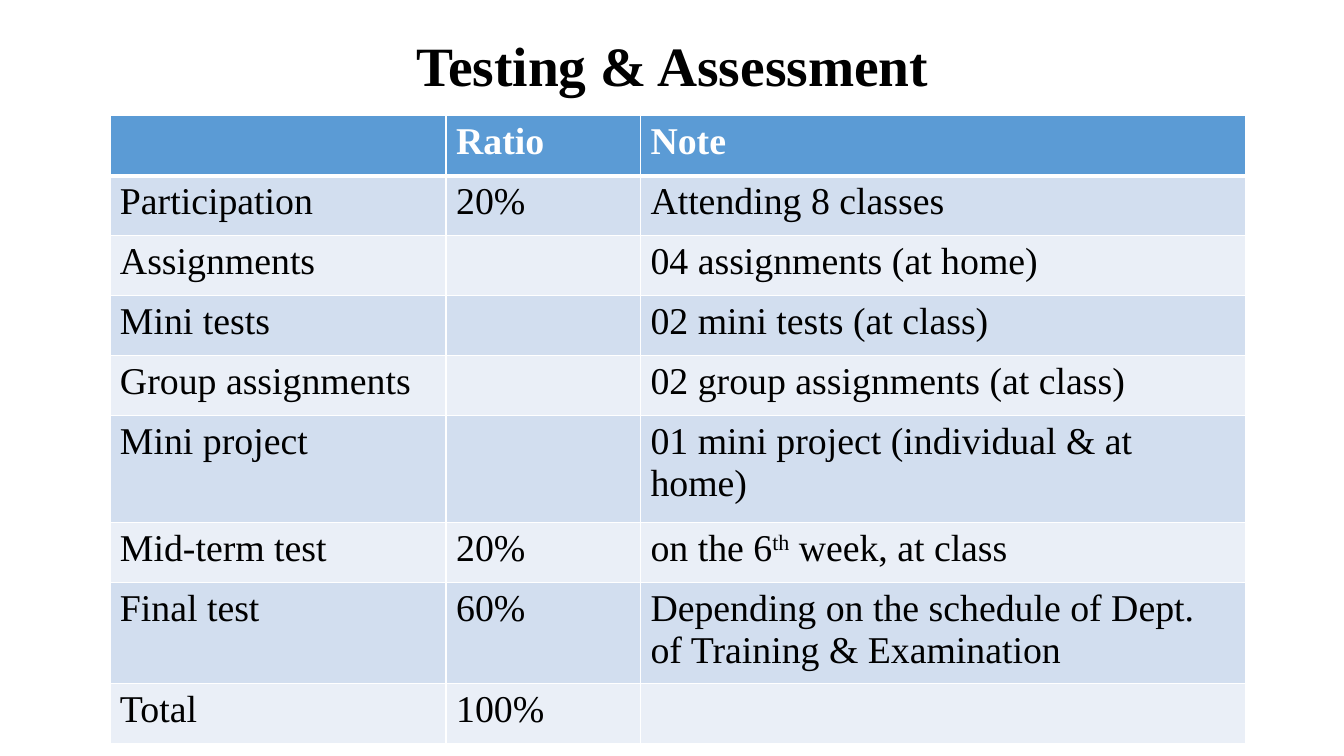
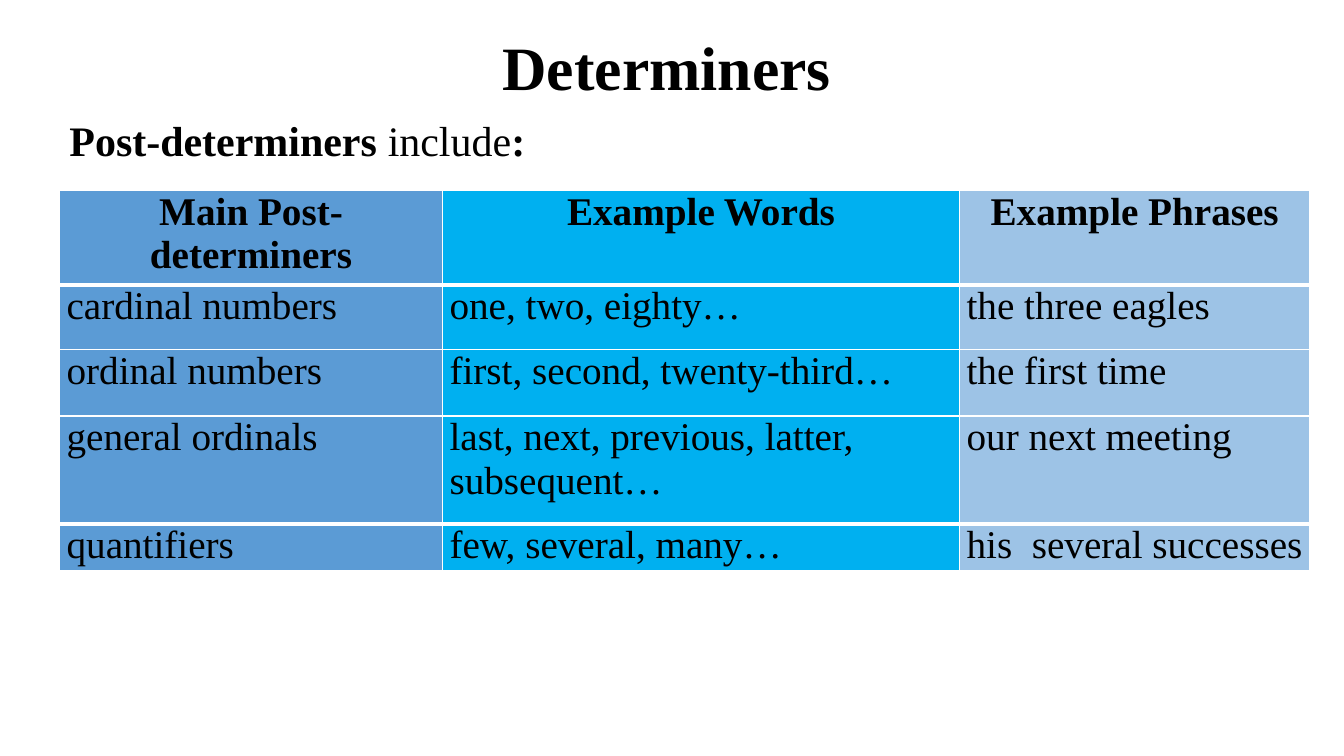
import pptx
import pptx.util
import pptx.dml.color
import pptx.enum.text
import pptx.oxml.ns
import lxml.etree

Cm = pptx.util.Cm
Pt = pptx.util.Pt
RGB = pptx.dml.color.RGBColor
ALIGN = pptx.enum.text.PP_ALIGN
ANCHOR = pptx.enum.text.MSO_ANCHOR
qn = pptx.oxml.ns.qn

FONT = "Times New Roman"
BLACK = RGB(0x00, 0x00, 0x00)
WHITE = RGB(0xFF, 0xFF, 0xFF)
BLUE = RGB(0x5B, 0x9B, 0xD5)
CYAN = RGB(0x00, 0xB0, 0xF0)
LIGHT = RGB(0x9D, 0xC3, 0xE6)
BAND = RGB(0xD2, 0xDE, 0xEF)
PALE = RGB(0xEA, 0xEF, 0xF7)

MARKS = [
    ["", "Ratio", "Note"],
    ["Participation", "20%", "Attending 8 classes"],
    ["Assignments", "", "04 assignments (at home)"],
    ["Mini tests", "", "02 mini tests (at class)"],
    ["Group assignments", "", "02 group assignments (at class)"],
    ["Mini project", "", "01 mini project (individual & at home)"],
    ["Mid-term test", "20%", "on the 6^th^ week, at class"],
    ["Final test", "60%",
     "Depending on the schedule of Dept. of Training & Examination"],
    ["Total", "100%", ""],
]
WORDS = [
    ["Main Post-determiners", "Example Words", "Example Phrases"],
    ["cardinal numbers", "one, two, eighty…", "the three eagles"],
    ["ordinal numbers", "first, second, twenty-third…", "the first time"],
    ["general ordinals", "last, next, previous, latter, subsequent…",
     "our next meeting"],
    ["quantifiers", "few, several, many…", "his  several successes"],
]


def style(para, size, color=BLACK, bold=False):
    font = para.font
    font.name = FONT
    font.size = Pt(size)
    font.bold = bold
    font.color.rgb = color


def add_box(slide, left, top, width, height):
    box = slide.shapes.add_textbox(Cm(left), Cm(top), Cm(width), Cm(height))
    box.text_frame.word_wrap = True
    return box.text_frame


def add_title(slide, text, size, left, top):
    frame = add_box(slide, left, top, 29.21, 1.95)
    frame.vertical_anchor = ANCHOR.MIDDLE
    para = frame.paragraphs[0]
    para.text = text
    para.alignment = ALIGN.CENTER
    para.line_spacing = 0.9
    style(para, size, bold=True)


def add_lead(slide, parts):
    para = add_box(slide, 1.5, 2.77, 30.66, 1.55).paragraphs[0]
    style(para, 30)
    for text, bold in parts:
        run = para.add_run()
        run.text = text
        run.font.bold = bold


def add_runs(para, text):
    for i, part in enumerate(text.split("^")):
        if part:
            run = para.add_run()
            run.text = part
            if i % 2:
                run.font._element.set("baseline", "30000")


def set_edge(cell, side, width):
    props = cell._tc.get_or_add_tcPr()
    line = lxml.etree.SubElement(props, qn("a:ln" + side), w=str(Pt(width)))
    fill = lxml.etree.SubElement(line, qn("a:solidFill"))
    lxml.etree.SubElement(fill, qn("a:srgbClr"), val=str(WHITE))


def add_table(slide, data, left, top, cols, rows, size, fill, heavy,
              head=BLACK, tight=False):
    frame = slide.shapes.add_table(len(rows), len(cols), Cm(left), Cm(top),
                                   Cm(sum(cols)), Cm(sum(rows)))
    table = frame.table
    for col, width in zip(table.columns, cols):
        col.width = Cm(width)
    for r, (row, height) in enumerate(zip(table.rows, rows)):
        row.height = Cm(height)
        for c, cell in enumerate(row.cells):
            for side, width in (("L", 1), ("R", 1),
                                ("T", 3 if r in heavy else 1),
                                ("B", 3 if r + 1 in heavy else 1)):
                set_edge(cell, side, width)
            cell.fill.solid()
            cell.fill.fore_color.rgb = fill(r, c)
            para = cell.text_frame.paragraphs[0]
            add_runs(para, data[r][c])
            style(para, size, BLACK if r else head, r == 0)
            if tight:
                cell.margin_left = cell.margin_right = Cm(0.18)
                cell.margin_top = cell.margin_bottom = 0
                para.space_before = para.space_after = Pt(6)
                para.alignment = ALIGN.LEFT if r else ALIGN.CENTER


def band_fill(r, c):
    if r == 0:
        return BLUE
    return BAND if r % 2 else PALE


def col_fill(r, c):
    return (BLUE, CYAN, LIGHT)[c]


def add_marks(slide):
    add_title(slide, "Testing & Assessment", 39.6, 2.34, 0.75)
    rows = [1.51] * 5 + [2.7] + [1.51] * 3
    add_table(slide, MARKS, 2.77, 2.92, [8.47, 4.9, 15.24], rows, 27,
              band_fill, {1}, head=WHITE)


def add_words(slide):
    add_title(slide, "Determiners", 44, 2.2, 0.8)
    add_lead(slide, [("Post-determiners ", True), ("include", False),
                     (":", True)])
    add_table(slide, WORDS, 1.5, 4.8, [9.65, 13.03, 8.83],
              [0.91, 1.63, 1.68, 2.72, 0.91], 28, col_fill, {1, 4},
              tight=True)


def main():
    deck = pptx.Presentation()
    deck.slide_width = Cm(33.87)
    deck.slide_height = Cm(19.05)
    for build in (add_marks, add_words):
        build(deck.slides.add_slide(deck.slide_layouts[6]))
    deck.save("out.pptx")


if __name__ == "__main__":
    main()
